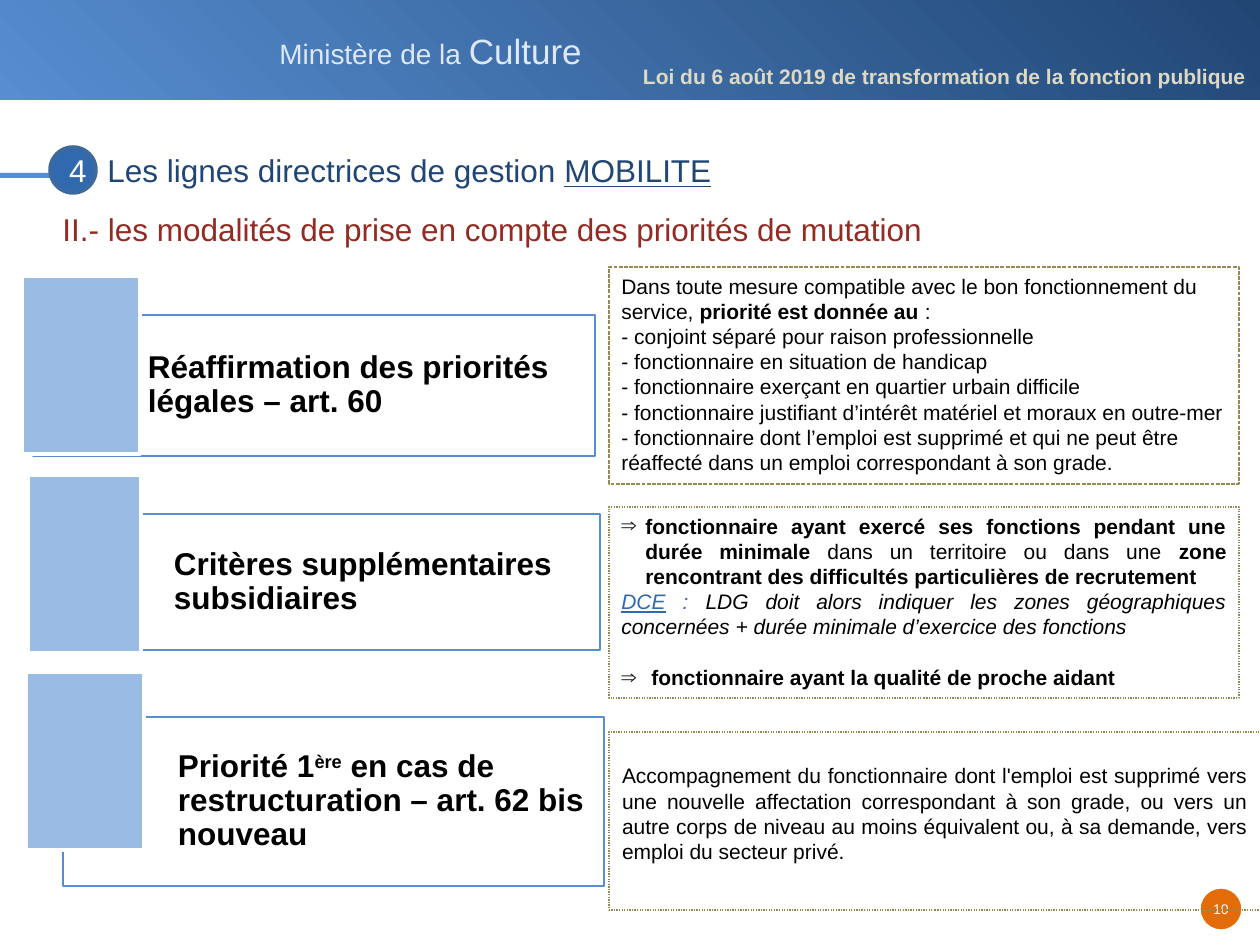
from lxml import etree
from pptx import Presentation
from pptx.dml.color import RGBColor
from pptx.enum.dml import MSO_LINE
from pptx.enum.shapes import MSO_SHAPE
from pptx.enum.text import MSO_ANCHOR, PP_ALIGN
from pptx.oxml.ns import qn
from pptx.util import Emu, Pt

RECT, OVAL = MSO_SHAPE.RECTANGLE, MSO_SHAPE.OVAL
LEFT, CENTER, JUSTIFY = PP_ALIGN.LEFT, PP_ALIGN.CENTER, PP_ALIGN.JUSTIFY
TOP, MIDDLE = MSO_ANCHOR.TOP, MSO_ANCHOR.MIDDLE
DASH, DOT = MSO_LINE.SQUARE_DOT, MSO_LINE.ROUND_DOT
NAVY, BLUE, SKY, PALE = "204674", "3069AE", "578ED1", "9ABBE3"
WHITE, BLACK, OLIVE = "FFFFFF", "000000", "948A54"
B, I, SUP = {"bold": True}, {"italic": True}, {"sup": True}

# Content: a paragraph is a list of (text, format) runs
HEADER = [[("Ministère de la ", {}), ("Culture", {"size": 20})]]
LAW = [[("Loi du 6 août 2019 de transformation de la fonction publique", B)]]
TITLE = [[("Les lignes directrices de gestion ", {}),
          ("MOBILITE", {"underline": True})]]
SUBTITLE = [[("II.- les modalités de prise en compte des priorités de mutation", {})]]

# Left column: outlined box, blue square, label
TOPICS = [
    ((33, 315, 562, 141), (22, 276, 118, 178),
     [("Réaffirmation des priorités légales – art. 60", B)]),
    ((59, 514, 541, 136), (28, 475, 113, 178),
     [("Critères supplémentaires subsidiaires", B)]),
    ((63, 717, 541, 169), (26, 672, 118, 178),
     [("Priorité 1", B), ("ère", B | SUP),
      (" en cas de restructuration – art. 62 bis nouveau", B)]),
]

PRIORITIES = [
    [("Dans toute mesure compatible avec le bon fonctionnement du service, ", {}),
     ("priorité est donnée au ", B), (":", {})],
] + [[(line, {})] for line in (
    "- conjoint séparé pour raison professionnelle",
    "- fonctionnaire en situation de handicap",
    "- fonctionnaire exerçant en quartier urbain difficile",
    "- fonctionnaire justifiant d’intérêt matériel et moraux en outre-mer",
    "- fonctionnaire dont l’emploi est supprimé et qui ne peut être "
    "réaffecté dans un emploi correspondant à son grade.",
)]
CRITERIA = [
    [("fonctionnaire ayant exercé ses fonctions pendant une durée minimale", B),
     (" dans un territoire ou dans une ", {}),
     ("zone rencontrant des difficultés particulières de recrutement", B)],
    [("DCE", I | {"color": BLUE, "underline": True}),
     (" :", I | {"color": BLUE}),
     (" LDG doit alors indiquer les zones géographiques concernées "
      "+ durée minimale d’exercice des fonctions", I)],
    [("fonctionnaire ayant la qualité de proche aidant", B)],
]
SUPPORT = [[(
    "Accompagnement du fonctionnaire dont l'emploi est supprimé vers une nouvelle "
    "affectation correspondant à son grade, ou vers un autre corps de niveau au moins "
    "équivalent ou, à sa demande, vers emploi du secteur privé.", {})]]

# Right column: box, dash, paragraphs, text format
DETAILS = [
    ((609, 267, 630, 217), DASH, PRIORITIES, {}),
    ((609, 507, 630, 191), DOT, CRITERIA,
     {"align": JUSTIFY, "bullets": {0: 24, 2: 30}, "before": {2: 14.4}}),
    ((609, 732, 652, 178), DOT, SUPPORT,
     {"align": JUSTIFY, "insets": (13, 31, 13, 6)}),
]


def px(n):
    return Emu(round(n * 914400 / 126))


def rgb(value):
    return RGBColor.from_string(value)


def add_bullet(p, indent):
    pPr = p._p.get_or_add_pPr()
    pPr.set("marL", str(px(indent)))
    pPr.set("indent", str(-px(indent)))
    etree.SubElement(pPr, qn("a:buFont"), typeface="Arial")
    etree.SubElement(pPr, qn("a:buChar"), char="⇒")


def write(s, paragraphs, size=12, color=BLACK, align=LEFT, anchor=TOP, wrap=True,
          insets=None, spacing=None, bullets=None, before=None):
    tf = s.text_frame
    tf.word_wrap, tf.vertical_anchor = wrap, anchor
    if insets:
        (tf.margin_left, tf.margin_top,
         tf.margin_right, tf.margin_bottom) = map(px, insets)
    for i, runs in enumerate(paragraphs):
        p = tf.add_paragraph() if i else tf.paragraphs[0]
        p.alignment = align
        if spacing:
            p.line_spacing = spacing
        if before and i in before:
            p.space_before = Pt(before[i])
        if bullets and i in bullets:
            add_bullet(p, bullets[i])
        for text, style in runs:
            r = p.add_run()
            r.text = text
            font = r.font
            font.name, font.size = "Arial", Pt(style.get("size", size))
            font.color.rgb = rgb(style.get("color", color))
            font.bold = style.get("bold", False)
            font.italic = style.get("italic", False)
            font.underline = style.get("underline", False)
            if style.get("sup"):
                r._r.get_or_add_rPr().set("baseline", "30000")


def add_shape(kind, box, fill=None, line=None, width=0.75, dash=None):
    s = slide.shapes.add_shape(kind, *map(px, box))
    s.shadow.inherit = False
    if fill:
        s.fill.solid()
        s.fill.fore_color.rgb = rgb(fill)
    else:
        s.fill.background()
    if line:
        s.line.color.rgb = rgb(line)
        s.line.width = Pt(width)
        if dash:
            s.line.dash_style = dash
    else:
        s.line.fill.background()
    return s


def add_text(box, paragraphs, **fmt):
    write(slide.shapes.add_textbox(*map(px, box)), paragraphs, **fmt)


prs = Presentation()
prs.slide_width, prs.slide_height = px(1260), px(945)
slide = prs.slides.add_slide(prs.slide_layouts[6])

# Header band
band = add_shape(RECT, (0, 0, 1260, 100))
band.fill.gradient()
band.fill.gradient_angle = 225
for stop, color in zip(band.fill.gradient_stops, (NAVY, SKY)):
    stop.color.rgb = rgb(color)
add_text((267, 23, 331, 55), HEADER, size=16, color="DDE8F6", wrap=False)
add_text((643, 67, 611, 21), LAW, color="DDD9C3", insets=(0, 0, 0, 0), spacing=0.85)

# Page number
badge = add_shape(OVAL, (1200, 888, 42, 42), "E36C09", WHITE)
write(badge, [[("10", {})]], size=8, color=WHITE, align=CENTER, anchor=MIDDLE,
      wrap=False, insets=(6, 6, 6, 6))

# Section title
add_shape(RECT, (0, 173, 86, 5), SKY)
add_text((95, 134, 1143, 59), TITLE, size=18, color=NAVY, spacing=Pt(28))
number = add_shape(OVAL, (50, 147, 46, 46), BLUE, "40699B", 2)
write(number, [[("4", {})]], size=18, color=WHITE, align=CENTER, anchor=MIDDLE)
add_text((50, 204, 965, 50), SUBTITLE, size=18, color="932B23")

# Topics on the left
for box, square, runs in TOPICS:
    s = add_shape(RECT, box, WHITE, SKY)
    write(s, [runs], size=18, anchor=MIDDLE, insets=(115, 9, 9, 9), spacing=0.9)
    add_shape(RECT, square, PALE, WHITE, 2)

# Details on the right
for box, dash, paragraphs, fmt in DETAILS:
    write(add_shape(RECT, box, line=OLIVE, dash=dash), paragraphs, **fmt)

prs.save("out.pptx")
